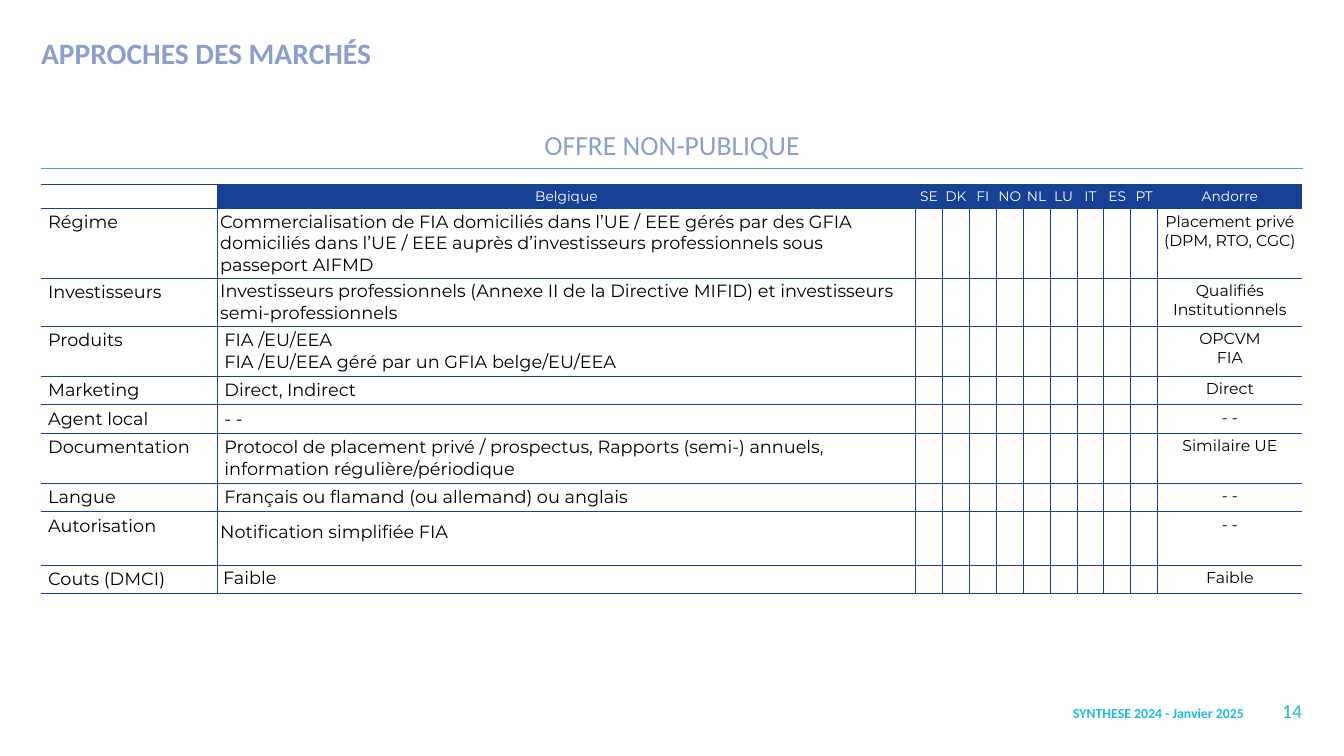
from dataclasses import dataclass

from lxml import etree
from pptx import Presentation
from pptx.dml.color import RGBColor
from pptx.enum import shapes, text
from pptx.oxml import ns
from pptx.util import Inches, Pt

NAVY = RGBColor(0x16, 0x41, 0x94)
LAVENDER = RGBColor(0x8A, 0xA0, 0xCA)
CYAN = RGBColor(0x1D, 0xBA, 0xDF)
SKY = RGBColor(0x44, 0x9D, 0xD7)
WHITE = RGBColor(0xFF, 0xFF, 0xFF)
BLACK = RGBColor(0, 0, 0)

LEFT, CENTER, RIGHT = text.PP_ALIGN.LEFT, text.PP_ALIGN.CENTER, text.PP_ALIGN.RIGHT
TOP, MIDDLE = text.MSO_ANCHOR.TOP, text.MSO_ANCHOR.MIDDLE

MARGIN, CONTENT_WIDTH = 0.58, 17.82
COUNTRIES = ("SE", "DK", "FI", "NO", "NL", "LU", "IT", "ES", "PT")
HEADINGS = ("", "Belgique", *COUNTRIES, "Andorre")
COLUMN_WIDTHS = (2.49, 9.86, *[0.38] * len(COUNTRIES), 2.04)
LAST = len(HEADINGS) - 1
HEADER_HEIGHT = 0.34

PLAIN = (0.1, 0.05, 0.1, 0.05)
TIGHT = (0.04, 0.04, 0.04, 0.04)
FLUSH = (0, 0.05, 0, 0.05)
NONE = (0, 0, 0, 0)
HAIRLINE, THIN, SOLID = 0.25, 0.5, 1


@dataclass
class Style:
    size: int
    color: RGBColor
    name: str = "Montserrat"
    bold: bool = False
    align: text.PP_ALIGN = LEFT
    before: float = 0
    after: float = 0
    spacing: float | None = None


@dataclass
class Label:
    wording: str
    box: tuple[float, float, float, float]
    style: Style
    anchor: text.MSO_ANCHOR = TOP


@dataclass
class Criterion:
    name: str
    belgium: str
    andorra: str
    height: float
    insets: tuple[float, float, float, float] = PLAIN
    before: float = 0
    after: float = 3
    spacing: float | None = None
    anchor: text.MSO_ANCHOR = TOP
    andorra_after: float = 0
    top: float = HAIRLINE
    bottom: float = HAIRLINE


TITLE = Label("APPROCHES DES MARCHÉS", (MARGIN, 0.49, 8.91, 0.5),
              Style(30, LAVENDER, "Calibri", True))
LABELS = (
    Label("14", (17.71, 9.86, 0.68, 0.34), Style(20, CYAN, "Calibri", align=RIGHT), MIDDLE),
    Label("OFFRE NON-PUBLIQUE", (MARGIN, 1.81, CONTENT_WIDTH, 0.47),
          Style(28, LAVENDER, "Calibri", align=CENTER)),
    Label("SYNTHESE 2024 - Janvier 2025", (9.49, 9.94, 8.08, 0.24),
          Style(14, CYAN, "Calibri", True, RIGHT), MIDDLE),
)
CRITERIA = (
    Criterion("Régime", "Commercialisation de FIA domiciliés dans l’UE / EEE gérés par des GFIA "
              "domiciliés dans l’UE / EEE auprès d’investisseurs professionnels sous passeport "
              "AIFMD", "Placement privé (DPM, RTO, CGC)", 0.97, TIGHT, before=1, after=1),
    Criterion("Investisseurs", "Investisseurs professionnels (Annexe II de la Directive MIFID) "
              "et investisseurs semi-professionnels", "Qualifiés Institutionnels", 0.68,
              TIGHT, before=1, after=1),
    Criterion("Produits", "FIA /EU/EEA\vFIA /EU/EEA géré par un GFIA belge/EU/EEA",
              "OPCVM\nFIA", 0.71),
    Criterion("Marketing", "Direct, Indirect", "Direct", 0.4),
    Criterion("Agent local", "- -", "- -", 0.4),
    Criterion("Documentation", "Protocol de placement privé / prospectus, Rapports (semi-) "
              "annuels, information régulière/périodique", "Similaire UE", 0.71, before=1),
    Criterion("Langue", "Français ou flamand (ou allemand) ou anglais", "- -", 0.4,
              (0.1, 0.05, 0.04, 0.05), andorra_after=3, bottom=THIN),
    Criterion("Autorisation", "Notification simplifiée FIA", "- -", 0.75, TIGHT, before=1,
              after=1, spacing=10, anchor=MIDDLE, andorra_after=3, top=THIN),
    Criterion("Couts (DMCI)", "Faible", "Faible", 0.4, (0.08, 0.04, 0.08, 0.02)),
)


def write(frame, wording: str, style: Style) -> None:
    frame.text = wording
    for para in frame.paragraphs:
        layout = {"alignment": style.align, "space_before": Pt(style.before),
                  "space_after": Pt(style.after),
                  "line_spacing": Pt(style.spacing) if style.spacing else 1.0}
        for key, value in layout.items():
            setattr(para, key, value)
        for span in para.runs:
            for key, value in {"size": Pt(style.size), "name": style.name,
                               "bold": style.bold}.items():
                setattr(span.font, key, value)
            span.font.color.rgb = style.color


def set_insets(target, insets: tuple[float, ...]) -> None:
    for side, inset in zip(("left", "top", "right", "bottom"), insets):
        setattr(target, f"margin_{side}", Inches(inset))


def place_label(box, label: Label) -> None:
    for key, value in zip(("left", "top", "width", "height"), label.box):
        setattr(box, key, Inches(value))
    frame = box.text_frame
    set_insets(frame, NONE)
    for key, value in {"word_wrap": True, "vertical_anchor": label.anchor,
                       "auto_size": text.MSO_AUTO_SIZE.SHAPE_TO_FIT_TEXT}.items():
        setattr(frame, key, value)
    write(frame, label.wording, label.style)


def set_borders(cell, column: int, top: float, bottom: float) -> None:
    """Rule the cell, leaving the outer sides of the table open."""
    left = HAIRLINE if column == 1 else SOLID
    right = HAIRLINE if column == 0 else SOLID
    widths = {"L": left if column else 0, "R": right if column < LAST else 0,
              "T": top, "B": bottom}
    properties = cell._tc.get_or_add_tcPr()
    for side, width in widths.items():
        line = etree.SubElement(properties, ns.qn(f"a:ln{side}"), w=str(Pt(width)))
        if not width:
            etree.SubElement(line, ns.qn("a:noFill"))
            continue
        fill = etree.SubElement(line, ns.qn("a:solidFill"))
        etree.SubElement(fill, ns.qn("a:srgbClr"), val=str(NAVY))


def fill_cell(cell, color: RGBColor | None) -> None:
    if color is None:
        cell.fill.background()
    else:
        cell.fill.solid()
        cell.fill.fore_color.rgb = color


def draw_header(table) -> None:
    table.rows[0].height = Inches(HEADER_HEIGHT)
    for column, heading in enumerate(HEADINGS):
        cell = table.cell(0, column)
        set_insets(cell, FLUSH if heading else NONE)
        write(cell.text_frame, heading, Style(14, WHITE, align=CENTER))
        set_borders(cell, column, HAIRLINE, HAIRLINE)
        fill_cell(cell, NAVY if heading else WHITE)


def draw_criterion(table, row: int, item: Criterion) -> None:
    table.rows[row].height = Inches(item.height)
    contents = {
        0: (item.name, PLAIN, Style(18, BLACK, after=3)),
        1: (item.belgium, item.insets, Style(18, BLACK, before=item.before, after=item.after,
                                             spacing=item.spacing)),
        LAST: (item.andorra, FLUSH, Style(16, BLACK, align=CENTER, after=item.andorra_after)),
    }
    for column in range(len(HEADINGS)):
        cell = table.cell(row, column)
        wording, insets, style = contents.get(column, ("", NONE, Style(14, BLACK)))
        set_insets(cell, insets)
        write(cell.text_frame, wording, style)
        set_borders(cell, column, item.top, item.bottom)
        fill_cell(cell, WHITE if column in (0, LAST) else None)
    table.cell(row, 1).vertical_anchor = item.anchor


def draw_table(page) -> None:
    height = HEADER_HEIGHT + sum(item.height for item in CRITERIA)
    table = page.shapes.add_table(len(CRITERIA) + 1, len(HEADINGS), Inches(MARGIN), Inches(2.6),
                                  Inches(CONTENT_WIDTH), Inches(height)).table
    table.first_row = table.horz_banding = False
    for column, width in zip(table.columns, COLUMN_WIDTHS):
        column.width = Inches(width)
    draw_header(table)
    for row, item in enumerate(CRITERIA, start=1):
        draw_criterion(table, row, item)


def draw_rule(page) -> None:
    rule = page.shapes.add_connector(shapes.MSO_CONNECTOR.STRAIGHT, Inches(MARGIN), Inches(2.37),
                                     Inches(MARGIN + CONTENT_WIDTH), Inches(2.37))
    rule.line.color.rgb = SKY
    rule.line.width = Pt(0.5)
    etree.SubElement(rule._element.spPr, ns.qn("a:effectLst"))


def main() -> None:
    deck = Presentation()
    deck.slide_width, deck.slide_height = Inches(18.98), Inches(10.67)
    page = deck.slides.add_slide(deck.slide_layouts[5])
    place_label(page.shapes.title, TITLE)
    for label in LABELS:
        place_label(page.shapes.add_textbox(0, 0, 0, 0), label)
    draw_rule(page)
    draw_table(page)
    deck.save("out.pptx")


if __name__ == "__main__":
    main()
